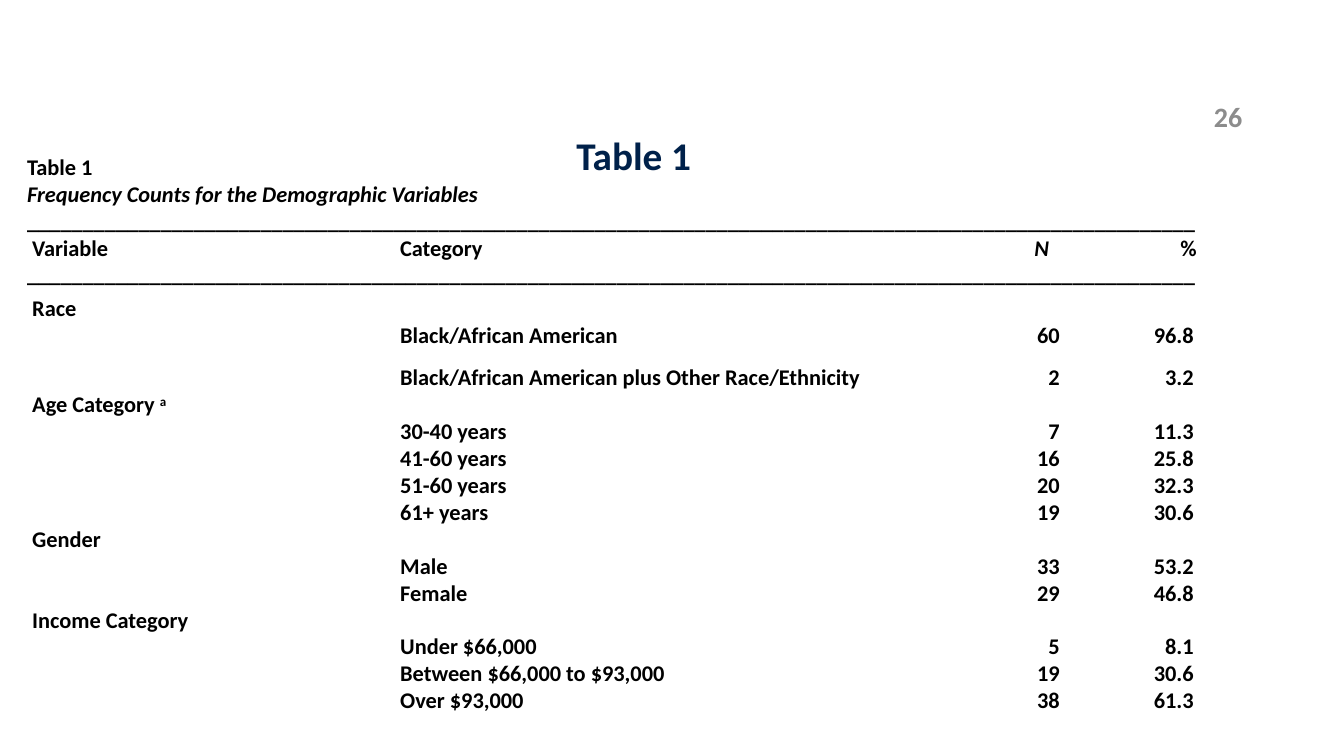
from lxml.etree import SubElement
from pptx import Presentation
from pptx.dml.color import RGBColor
from pptx.enum.text import MSO_ANCHOR, PP_ALIGN
from pptx.oxml.ns import qn
from pptx.util import Inches, Pt

FONT = "Calibri"
RULE = "_" * 105
COLUMNS = [3.65, 5.72, 0.96, 1.33]
GROUPS = [
    ("Race", "", [("Black/African American", "60", "96.8"),
                  ("Black/African American plus Other Race/Ethnicity", "2", "3.2")]),
    ("Age Category ", "a", [("30-40 years", "7", "11.3"),
                            ("41-60 years", "16", "25.8"),
                            ("51-60 years", "20", "32.3"),
                            ("61+ years", "19", "30.6")]),
    ("Gender", "", [("Male", "33", "53.2"),
                    ("Female", "29", "46.8")]),
    ("Income Category", "", [("Under $66,000", "5", "8.1"),
                             ("Between $66,000 to $93,000", "19", "30.6"),
                             ("Over $93,000", "38", "61.3")]),
]


def color(value):
    return RGBColor.from_string(value)


def add_text(p, text, size=16, fill="000000", italic=False, superscript=False):
    r = p.add_run()
    r.text = text
    f = r.font
    f.name, f.size, f.bold, f.italic = FONT, Pt(size), True, italic
    f.color.rgb = color(fill)
    if superscript:
        r._r.get_or_add_rPr().set("baseline", "30000")


def add_box(s, left, top, width, height, anchor=MSO_ANCHOR.MIDDLE):
    sp = s.shapes.add_textbox(Inches(left), Inches(top), Inches(width), Inches(height))
    tf = sp.text_frame
    tf.word_wrap = True
    tf.vertical_anchor = anchor
    return tf


def add_tabs(p, stops):
    tabs = SubElement(p._p.get_or_add_pPr(), qn("a:tabLst"))
    for position, align in stops:
        SubElement(tabs, qn("a:tab"), pos=str(Inches(position)), algn=align)


def title(s, left, top, width, height):
    p = add_box(s, left, top, width, height).paragraphs[0]
    p.alignment = PP_ALIGN.CENTER
    p.line_spacing = 0.9
    add_text(p, "Table 1", size=28, fill="00214A")


def slide_number(s, left, top, width, height):
    p = add_box(s, left, top, width, height).paragraphs[0]
    p.alignment = PP_ALIGN.RIGHT
    add_text(p, "26", size=20, fill="8C8C8C")


def table_heading(s, left, top, width, height):
    tf = add_box(s, left, top, width, height, MSO_ANCHOR.TOP)
    add_text(tf.paragraphs[0], "Table 1")
    add_text(tf.add_paragraph(), "Frequency Counts for the Demographic Variables", italic=True)
    add_text(tf.add_paragraph(), RULE)
    # Column names on tab stops
    p = tf.add_paragraph()
    add_tabs(p, [(0.05, "l"), (3.7, "l"), (9.99, "l"), (width - 0.3, "r")])
    add_text(p, "\tVariable\tCategory\t")
    add_text(p, "N", italic=True)
    add_text(p, "\t%")
    add_text(tf.add_paragraph(), RULE)


def frequency_table(s, left, top, row_height):
    # One row per group name, then one per category
    rows = []
    for name, note, categories in GROUPS:
        rows.append((name, "", "", "", note))
        rows += [("", *category, "") for category in categories]
    table = s.shapes.add_table(len(rows), len(COLUMNS), Inches(left), Inches(top),
                               Inches(sum(COLUMNS)), Inches(row_height * len(rows))).table
    table.first_row = table.horz_banding = False
    for column, width in zip(table.columns, COLUMNS):
        column.width = Inches(width)
    for i, (*values, note) in enumerate(rows):
        # The second category of the first group has a double row
        table.rows[i].height = Inches(row_height * (2 if i == 2 else 1))
        for j, value in enumerate(values):
            cell = table.cell(i, j)
            cell.fill.background()
            cell.vertical_anchor = MSO_ANCHOR.BOTTOM
            cell.margin_left = cell.margin_right = Inches(0.07)
            cell.margin_top = cell.margin_bottom = 0
            p = cell.text_frame.paragraphs[0]
            if j > 1:
                p.alignment = PP_ALIGN.RIGHT
            if value:
                add_text(p, value)
                if j == 0 and note:
                    add_text(p, note, superscript=True)
            else:
                # Keeps empty cells from stretching the row
                SubElement(p._p, qn("a:endParaRPr"), sz="1600")


def main():
    prs = Presentation()
    prs.slide_width, prs.slide_height = Inches(13.33), Inches(7.5)
    s = prs.slides.add_slide(prs.slide_layouts[6])
    title(s, 0.38, 1.33, 11.81, 0.47)
    slide_number(s, 9.42, 0.95, 3, 0.4)
    table_heading(s, 0.17, 1.47, 11.9, 1.72)
    frequency_table(s, 0.25, 2.93, 0.21)
    prs.save("out.pptx")


if __name__ == "__main__":
    main()
